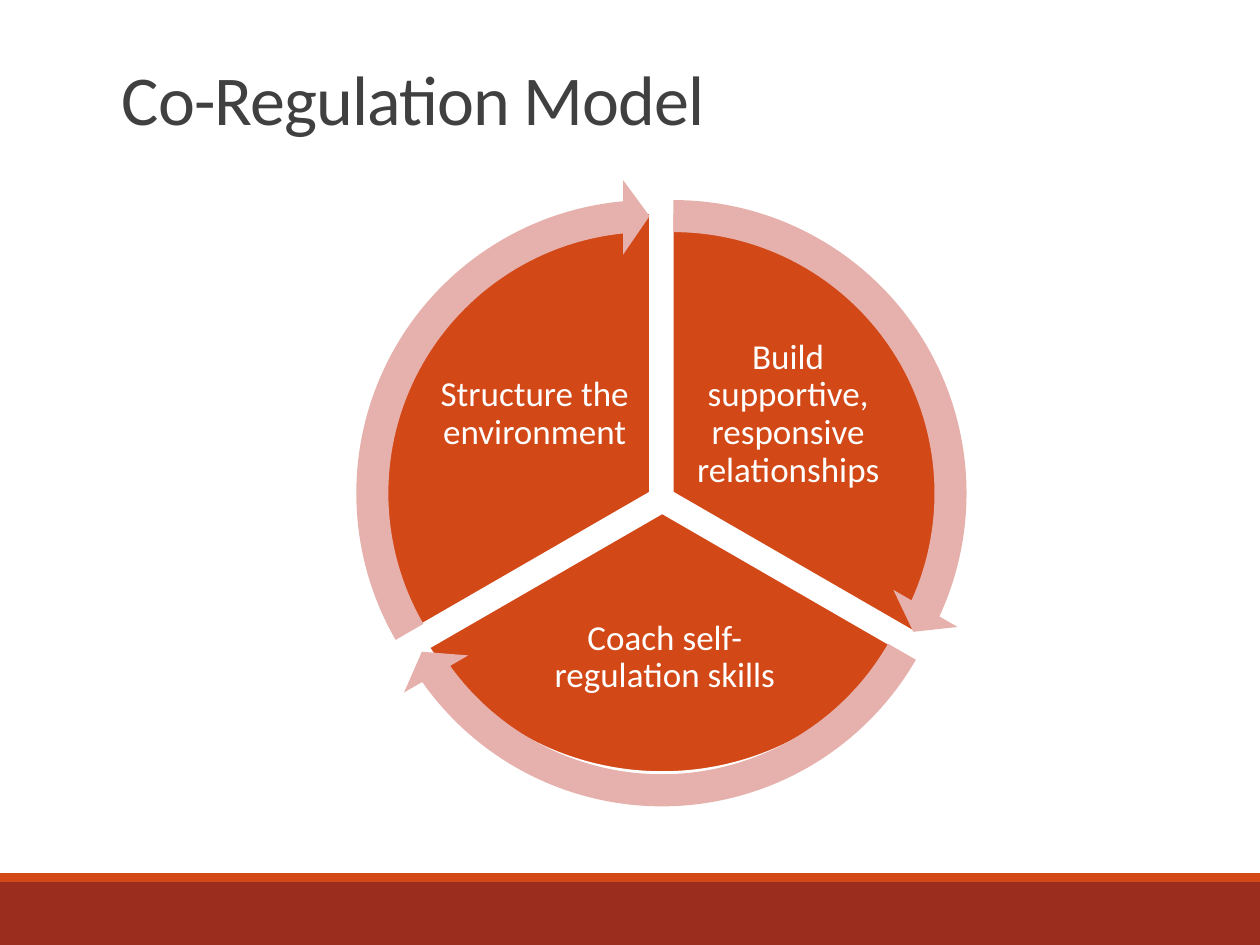
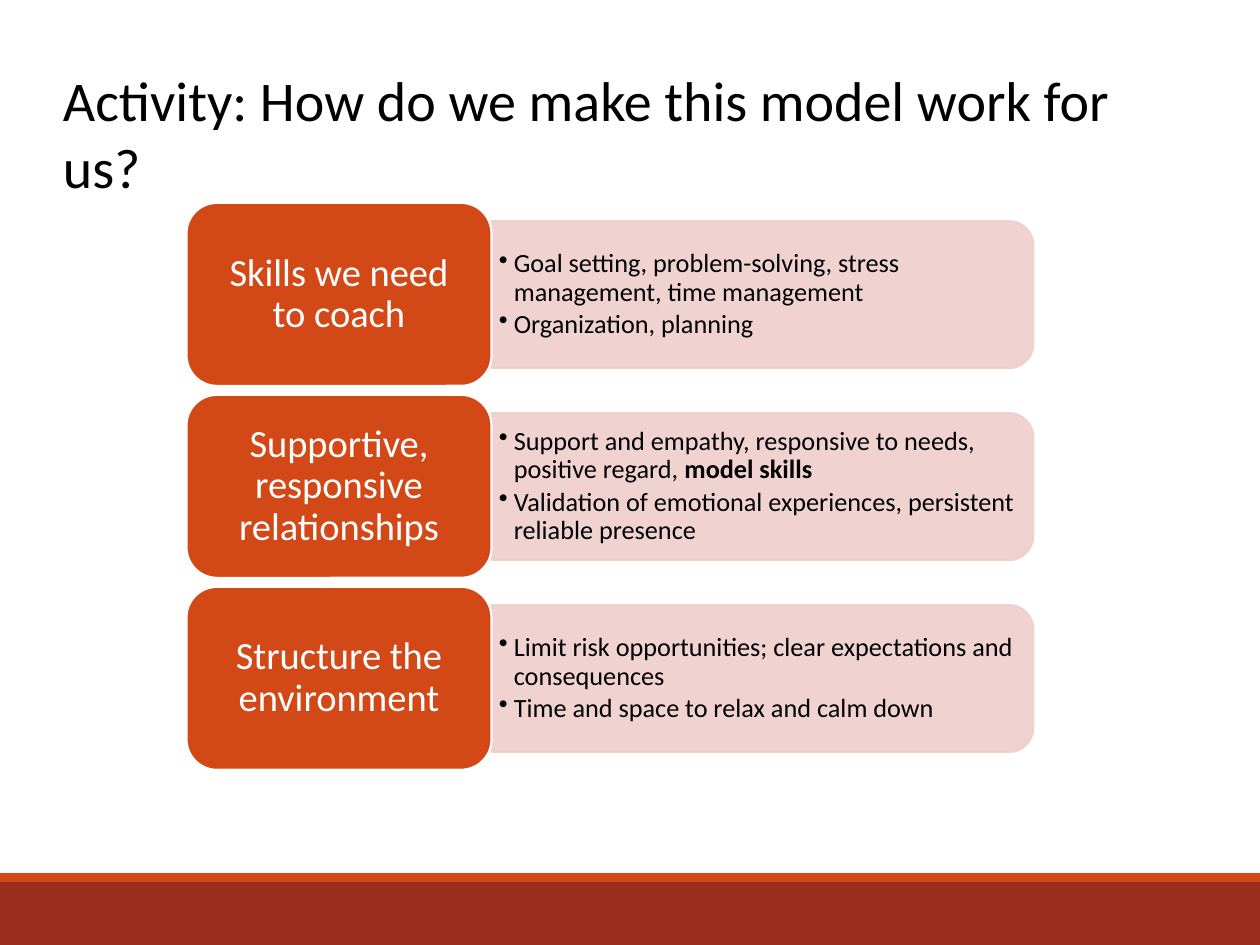
import math

from lxml import etree
from pptx import Presentation
from pptx import util as u
from pptx.dml.color import RGBColor
from pptx.enum import shapes, text
from pptx.oxml import ns

COLORS = {
    "orange": "D34817", "brick": "9B2D1F", "rose": "E6B1AC",
    "blush": "EFCFCC", "white": "FFFFFF", "ink": "404040", "black": "000000",
}
FONT = "Calibri"
LABEL = {"align": text.PP_ALIGN.CENTER, "spacing": 0.9, "after": 35}
BULLET = {"align": text.PP_ALIGN.LEFT, "spacing": 0.9, "after": 15, "bullet": "•"}

SEGMENTS = [
    ("Build supportive, responsive relationships",
     (7.92, 4.29, 11.28, 11.28), (162, 18), (13.87, 6.68, 4.04, 3.35),
     (7.24, 3.61), (14.725, 161.994)),
    ("Coach self-regulation skills",
     (7.85, 5.11, 11, 10.46), (18, 90), (10.46, 11.89, 5.89, 2.74),
     (7.01, 4.01), (86.72, 18.005)),
    ("Structure the environment",
     (7.47, 4.29, 11.28, 11.28), (90, 162), (8.76, 6.68, 4.04, 3.35),
     (6.76, 3.61), (158.73, 90)),
]
ARROW_SIZE = 12.67

STRATEGIES = [
    ("Skills we need to coach", [
        [("Goal setting, problem-solving, stress management, time management", False)],
        [("Organization, planning", False)]]),
    ("Supportive, responsive relationships", [
        [("Support and empathy, responsive to needs, positive regard, ", False),
         ("model skills", True)],
        [("Validation of emotional experiences, persistent reliable presence", False)]]),
    ("Structure the environment", [
        [("Limit risk opportunities; clear expectations and consequences", False)],
        [("Time and space to relax and calm down", False)]]),
]


def rgb(color):
    return RGBColor.from_string(COLORS[color])


def cm(lengths):
    return [u.Cm(length) for length in lengths]


def apply(target, values):
    for key, value in values.items():
        setattr(target, key, value)


def paint(shape, fill, line=None):
    shape.shadow.inherit = False
    shape.fill.solid()
    shape.fill.fore_color.rgb = rgb(fill)
    if line:
        shape.line.color.rgb = rgb(line)
        shape.line.width = u.Pt(1.25)
    else:
        shape.line.fill.background()


def add_preset(slide, kind, box, fill, line=None, adjustments=()):
    shape = slide.shapes.add_shape(kind, *cm(box))
    paint(shape, fill, line)
    for index, value in enumerate(adjustments):
        shape.adjustments[index] = value
    return shape


def format_paragraph(paragraph, align=None, spacing=None, after=None, bullet=None):
    apply(paragraph, {"alignment": align, "line_spacing": spacing})
    properties = paragraph._p.get_or_add_pPr()
    if after:
        space = etree.SubElement(properties, ns.qn("a:spcAft"))
        etree.SubElement(space, ns.qn("a:spcPct"), val=str(after * 1000))
    if bullet:
        properties.set("marL", str(u.Cm(0.3)))
        properties.set("indent", str(-u.Cm(0.3)))
        etree.SubElement(properties, ns.qn("a:buChar"), char=bullet)


def write(shape, paragraphs, size, color, margins, anchor=text.MSO_ANCHOR.MIDDLE,
          style=None):
    frame = shape.text_frame
    sides = ("margin_left", "margin_top", "margin_right", "margin_bottom")
    apply(frame, dict(zip(sides, cm(margins))))
    apply(frame, {"word_wrap": True, "vertical_anchor": anchor})
    for index, runs in enumerate(paragraphs):
        paragraph = frame.add_paragraph() if index else frame.paragraphs[0]
        format_paragraph(paragraph, **(style or {}))
        for wording, bold in runs:
            run = paragraph.add_run()
            run.text = wording
            apply(run.font, {"name": FONT, "size": u.Pt(size), "bold": bold})
            run.font.color.rgb = rgb(color)


def add_title(slide, wording, box, size, color, anchor, spacing=None, tracking=None):
    title = slide.shapes.add_textbox(*cm(box))
    write(title, [[(wording, False)]], size, color, (0.25, 0.13, 0.25, 0.13),
          anchor, {"spacing": spacing})
    if tracking:
        run = title.text_frame.paragraphs[0].runs[0]
        run.font._element.set("spc", str(tracking))


def add_footer_bands(slide):
    add_preset(slide, shapes.MSO_SHAPE.RECTANGLE, (0, 17.78, 25.4, 1.27), "brick")
    add_preset(slide, shapes.MSO_SHAPE.RECTANGLE, (0, 17.6, 25.4, 0.18), "orange")


def add_segment(slide, label, pie_box, angles, label_box):
    add_preset(slide, shapes.MSO_SHAPE.PIE, pie_box, "orange", "white", angles)
    caption = slide.shapes.add_textbox(*cm(label_box))
    write(caption, [[(label, False)]], 20, "white", (0.08,) * 4, style=LABEL)


def add_cycle_arrow(slide, corner, angles):
    add_preset(slide, shapes.MSO_SHAPE.CIRCULAR_ARROW,
               (*corner, ARROW_SIZE, ARROW_SIZE), "rose",
               adjustments=(0.051, 3.275, *angles, 0.059))


def add_panel(slide, left, top, width, height, radius, points):
    right, bottom = left + width, top + height
    outline = [(left, top)]
    for center_y, start in ((top + radius, -90), (bottom - radius, 0)):
        for step in range(0, 91, 6):
            angle = math.radians(start + step)
            outline.append((right - radius + radius * math.cos(angle),
                            center_y + radius * math.sin(angle)))
    outline.append((left, bottom))
    builder = slide.shapes.build_freeform(*cm(outline[0]))
    builder.add_line_segments([cm(point) for point in outline[1:]], close=True)
    panel = builder.convert_to_shape()
    paint(panel, "blush", "blush")
    for color in panel._element.spPr.iter(ns.qn("a:srgbClr")):
        etree.SubElement(color, ns.qn("a:alpha"), val="90000")
    write(panel, points, 15, "black", (0.15, 0.23, 0.3, 0.23), style=BULLET)


def add_strategy(slide, top, heading, points):
    add_panel(slide, 9.91, top + 0.37, 10.92, 2.96, 0.49, points)
    card = add_preset(slide, shapes.MSO_SHAPE.ROUNDED_RECTANGLE,
                      (3.76, top, 6.15, 3.69), "orange", "white")
    write(card, [[(heading, False)]], 22, "white", (0.41, 0.3, 0.41, 0.3), style=LABEL)


def new_slide(deck):
    slide = deck.slides.add_slide(deck.slide_layouts[6])
    add_footer_bands(slide)
    return slide


def build_model(deck):
    slide = new_slide(deck)
    for label, pie_box, pie_angles, label_box, _, _ in SEGMENTS:
        add_segment(slide, label, pie_box, pie_angles, label_box)
    for *_, corner, arrow_angles in SEGMENTS:
        add_cycle_arrow(slide, corner, arrow_angles)
    add_title(slide, "Co-Regulation Model", (2.21, -1.09, 20.96, 4.04), 40, "ink",
              text.MSO_ANCHOR.BOTTOM, 0.85, -50)


def build_activity(deck):
    slide = new_slide(deck)
    for row, (heading, points) in enumerate(STRATEGIES):
        add_strategy(slide, 4.09 + 3.87 * row, heading, points)
    add_title(slide, "Activity: How do we make this model work for us?",
              (1.02, 1.19, 23.34, 1.63), 32, "black", text.MSO_ANCHOR.TOP)


def main():
    deck = Presentation()
    apply(deck, {"slide_width": u.Cm(25.4), "slide_height": u.Cm(19.05)})
    build_model(deck)
    build_activity(deck)
    deck.save("out.pptx")


if __name__ == "__main__":
    main()
